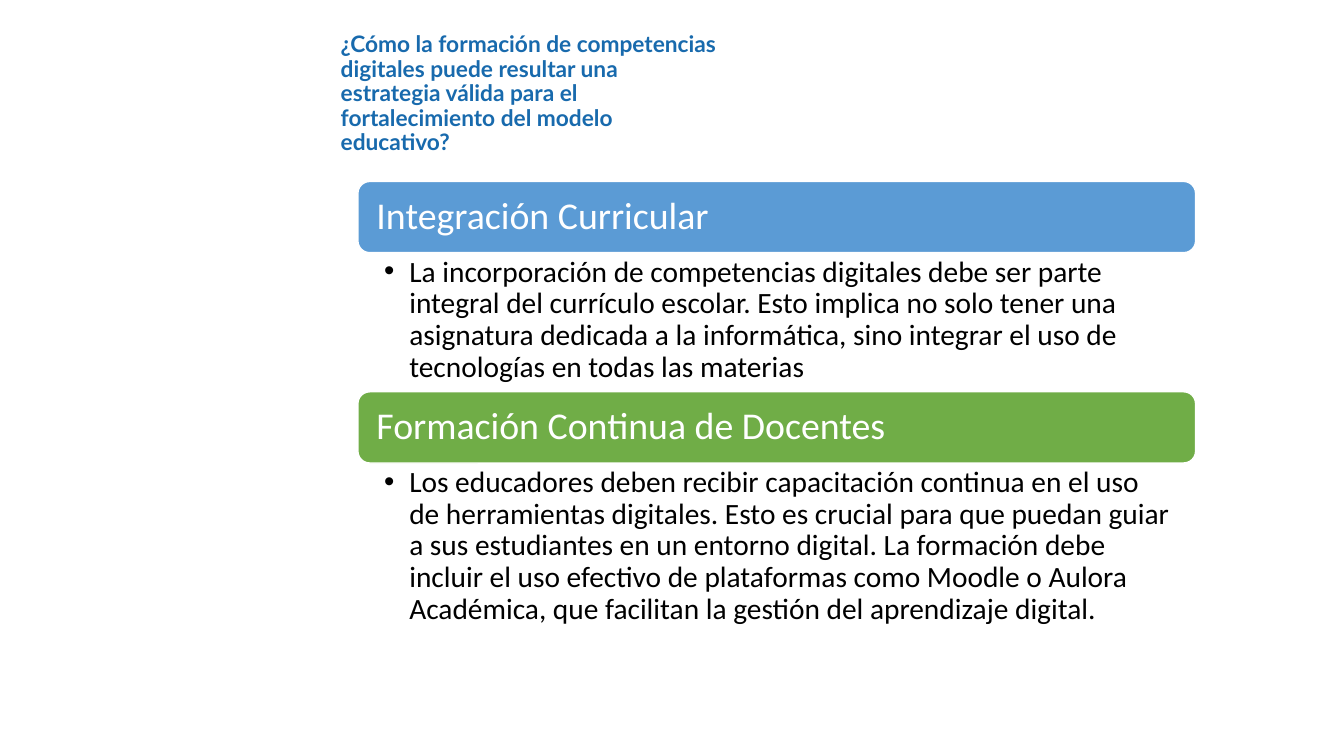
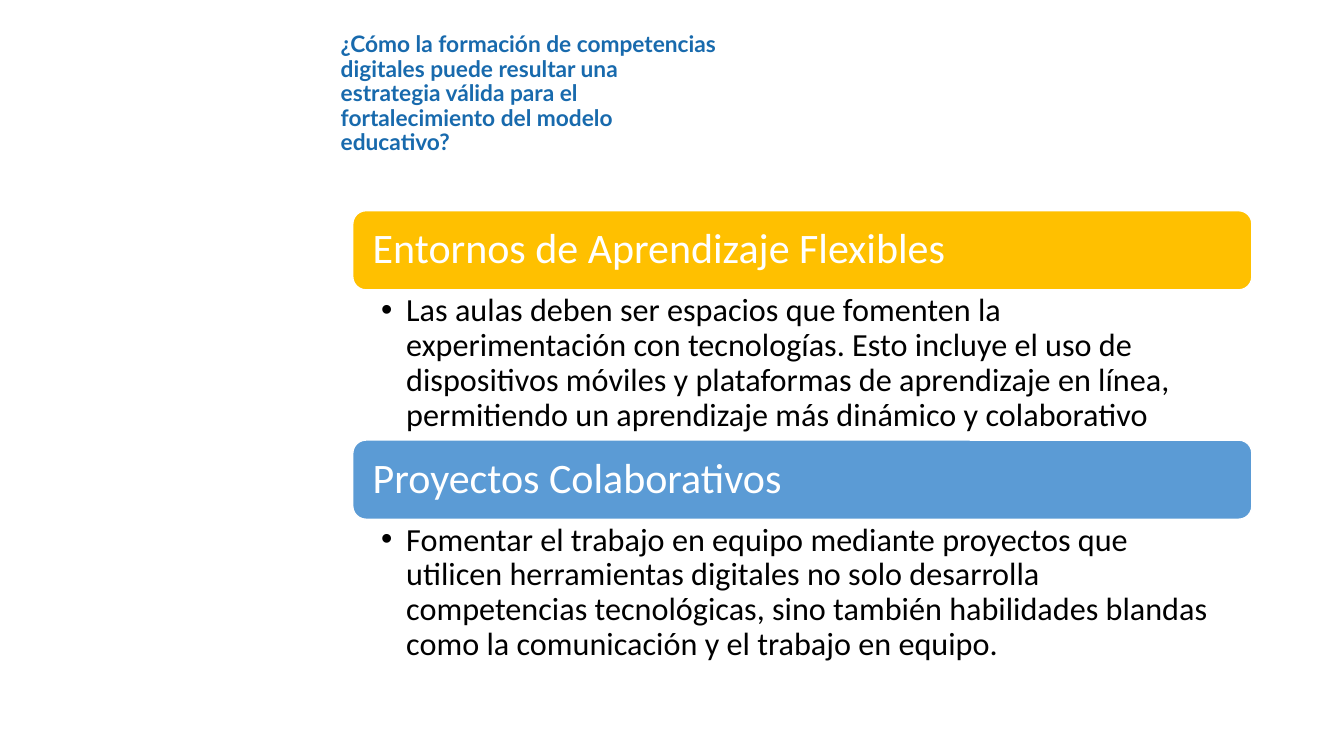
from dataclasses import dataclass

from pptx import Presentation, util as u
from pptx.dml.color import RGBColor
from pptx.enum import shapes, text

SLIDE_WIDTH, SLIDE_HEIGHT = u.Inches(13.333), u.Inches(7.5)
QUESTION = (
    "¿Cómo la formación de competencias digitales puede resultar una estrategia "
    "válida para el fortalecimiento del modelo educativo?"
)
TITLE_BLUE, WHITE, BLACK = "186AAD", "FFFFFF", "000000"
BLUE, GREEN, GOLD = "5B9BD5", "70AD47", "FFC000"
TITLE_FONT, BODY_FONT = "Lato", "Calibri"
TWO_CONTENT_LAYOUT = 3
BULLET_INDENT = u.Inches(0.25)


@dataclass(frozen=True)
class Box:
    """Position and size as percentages of the slide."""
    left: float
    top: float
    width: float
    height: float


@dataclass(frozen=True)
class Strategy:
    heading: str
    detail: str
    color: str
    detail_height: float


@dataclass(frozen=True)
class Page:
    left: float
    top: float
    width: float
    banner_height: float
    heading_size: float
    detail_size: float
    heading_inset: float
    detail_insets: tuple[float, float]
    strategies: tuple[Strategy, ...]


TITLE_BOX = Box(24.6, 2.8, 29.77, 19.33)

PAGES = (
    Page(26.63, 24, 62.33, 9.42, 27, 21, 0.15, (0.26, 0.21), (
        Strategy(
            "Integración Curricular",
            "La incorporación de competencias digitales debe ser parte integral del "
            "currículo escolar. Esto implica no solo tener una asignatura dedicada a la "
            "informática, sino integrar el uso de tecnologías en todas las materias",
            BLUE, 18.4),
        Strategy(
            "Formación Continua de Docentes",
            "Los educadores deben recibir capacitación continua en el uso de herramientas "
            "digitales. Esto es crucial para que puedan guiar a sus estudiantes en un "
            "entorno digital. La formación debe incluir el uso efectivo de plataformas "
            "como Moodle o Aulora Académica, que facilitan la gestión del aprendizaje "
            "digital.",
            GREEN, 22.4),
    )),
    Page(26.25, 27.87, 66.9, 10.47, 30, 23, 0.16, (0.28, 0.23), (
        Strategy(
            "Entornos de Aprendizaje Flexibles",
            "Las aulas deben ser espacios que fomenten la experimentación con "
            "tecnologías. Esto incluye el uso de dispositivos móviles y plataformas de "
            "aprendizaje en línea, permitiendo un aprendizaje más dinámico y colaborativo",
            GOLD, 19.87),
        Strategy(
            "Proyectos Colaborativos",
            "Fomentar el trabajo en equipo mediante proyectos que utilicen herramientas "
            "digitales no solo desarrolla competencias tecnológicas, sino también "
            "habilidades blandas como la comunicación y el trabajo en equipo.",
            BLUE, 19.87),
    )),
)


def rgb(value: str) -> RGBColor:
    return RGBColor.from_string(value)


def bounds(box: Box) -> tuple[int, int, int, int]:
    return (
        round(SLIDE_WIDTH * box.left / 100),
        round(SLIDE_HEIGHT * box.top / 100),
        round(SLIDE_WIDTH * box.width / 100),
        round(SLIDE_HEIGHT * box.height / 100),
    )


def place(placeholder, box: Box) -> None:
    (placeholder.left, placeholder.top,
     placeholder.width, placeholder.height) = bounds(box)


def write(shape, content: str, font: str, size: float, color: str, anchor,
          insets: tuple[float, float, float, float], bold: bool = False) -> None:
    frame = shape.text_frame
    frame.text = content
    frame.word_wrap = True
    frame.auto_size = text.MSO_AUTO_SIZE.NONE
    frame.vertical_anchor = anchor
    (frame.margin_left, frame.margin_top,
     frame.margin_right, frame.margin_bottom) = map(u.Inches, insets)
    paragraph = frame.paragraphs[0]
    paragraph.alignment = text.PP_ALIGN.LEFT
    paragraph.line_spacing = 0.9
    paragraph.space_before = u.Pt(0)
    for run in paragraph.runs:
        run.font.name = font
        run.font.size = u.Pt(size)
        run.font.bold = bold
        run.font.color.rgb = rgb(color)


def draw_title(slide) -> None:
    title = slide.shapes.title
    place(title, TITLE_BOX)
    write(title, QUESTION, TITLE_FONT, 16.2, TITLE_BLUE,
          text.MSO_ANCHOR.MIDDLE, (0.1, 0.05, 0.1, 0.05), bold=True)


def draw_banner(slide, page: Page, strategy: Strategy, top: float) -> None:
    box = Box(page.left, top, page.width, page.banner_height)
    banner = slide.shapes.add_shape(shapes.MSO_SHAPE.ROUNDED_RECTANGLE, *bounds(box))
    banner.shadow.inherit = False
    banner.fill.solid()
    banner.fill.fore_color.rgb = rgb(strategy.color)
    banner.line.color.rgb = rgb(WHITE)
    banner.line.width = u.Pt(1)
    inset = page.heading_inset
    write(banner, strategy.heading, BODY_FONT, page.heading_size, WHITE,
          text.MSO_ANCHOR.MIDDLE, (inset, 0.1, inset, 0.1))


def draw_detail(detail, page: Page, strategy: Strategy, top: float) -> None:
    place(detail, Box(page.left, top, page.width, strategy.detail_height))
    left_inset, right_inset = page.detail_insets
    write(detail, strategy.detail, BODY_FONT, page.detail_size, BLACK,
          text.MSO_ANCHOR.TOP, (left_inset, 0.04, right_inset, 0.04))
    properties = detail.text_frame.paragraphs[0]._p.get_or_add_pPr()
    properties.set("marL", str(BULLET_INDENT))
    properties.set("indent", str(-BULLET_INDENT))


def draw_page(deck, page: Page) -> None:
    slide = deck.slides.add_slide(deck.slide_layouts[TWO_CONTENT_LAYOUT])
    draw_title(slide)
    top = page.top
    for index, strategy in enumerate(page.strategies, start=1):
        draw_banner(slide, page, strategy, top)
        top += page.banner_height
        draw_detail(slide.placeholders[index], page, strategy, top)
        top += strategy.detail_height


def main() -> None:
    deck = Presentation()
    deck.slide_width, deck.slide_height = SLIDE_WIDTH, SLIDE_HEIGHT
    for page in PAGES:
        draw_page(deck, page)
    deck.save("out.pptx")


if __name__ == "__main__":
    main()
